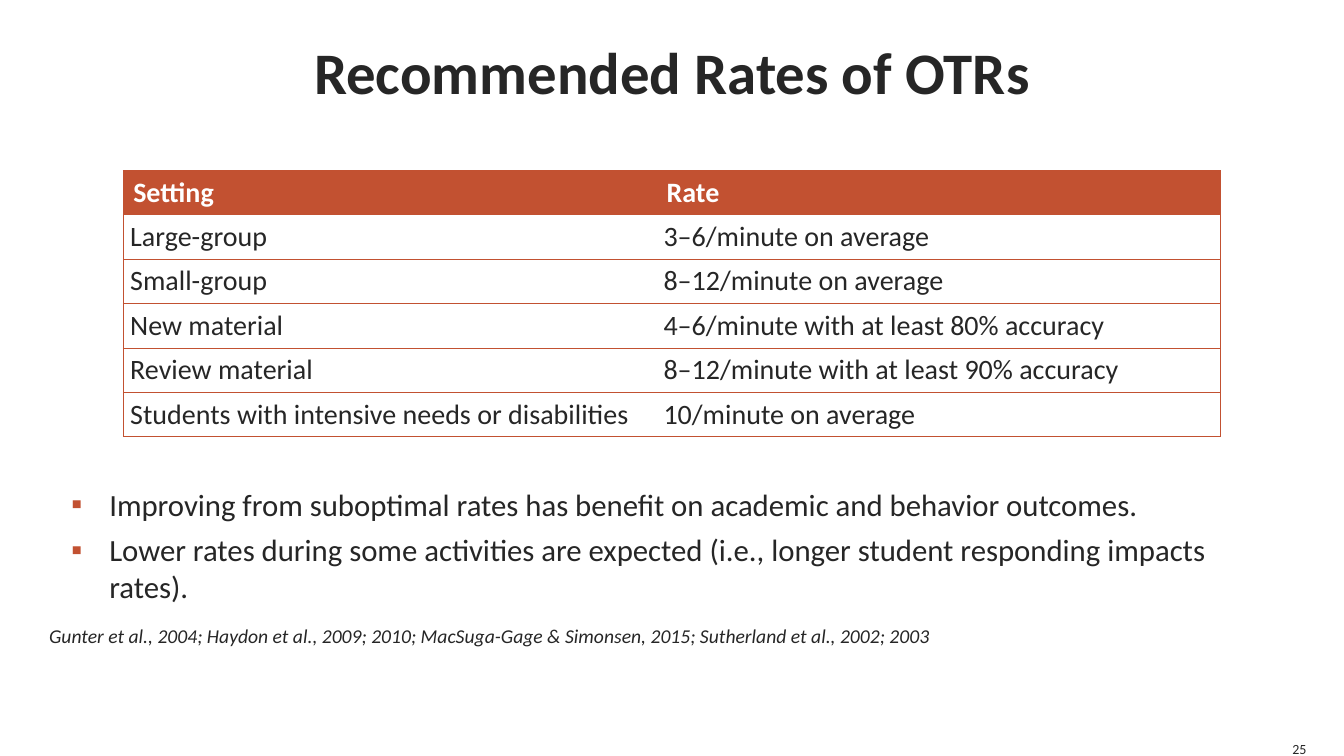
from pptx import Presentation
from pptx.dml.color import RGBColor
from pptx.enum.text import MSO_ANCHOR as ANCHOR, PP_ALIGN as ALIGN
from pptx.oxml.ns import qn
from pptx.util import Pt
from lxml.etree import SubElement

INK, ACCENT, WHITE = "262626", "C25131", "FFFFFF"


def rgb(value):
    return RGBColor.from_string(value)


class Deck:
    """Holds the text style and the current slide, and adds elements to it."""

    style = {"name": "Calibri", "bold": False, "italic": False}

    def __init__(self, prs):
        self.s = prs.slides.add_slide(prs.slide_layouts[5])

    def run(self, p, text, size, color=INK, **extra):
        r = p.add_run()
        r.text = text
        for key, value in {**self.style, "size": Pt(size), **extra}.items():
            setattr(r.font, key, value)
        r.font.color.rgb = rgb(color)

    def inset(self, target, x, y):
        for side, value in zip(("left", "right", "top", "bottom"), (x, x, y, y)):
            setattr(target, "margin_" + side, Pt(value))

    def title(self, text, box):
        sp = self.s.shapes.title
        sp.left, sp.top, sp.width, sp.height = map(Pt, box)
        tf = sp.text_frame
        tf.word_wrap, tf.vertical_anchor = True, ANCHOR.MIDDLE
        self.inset(tf, 0, 0)
        tf.paragraphs[0].alignment = ALIGN.CENTER
        self.run(tf.paragraphs[0], text, 42, bold=True)

    def text(self, lines, box, size, bullet=None, **extra):
        tf = self.s.shapes.add_textbox(*map(Pt, box)).text_frame
        tf.word_wrap = True
        for i, line in enumerate(lines):
            p = tf.add_paragraph() if i else tf.paragraphs[0]
            if bullet:
                self.bullet(p, bullet)
            self.run(p, line, size, **extra)

    def bullet(self, p, char):
        p.space_after = Pt(6)
        pPr = p._p.get_or_add_pPr()
        pPr.set("marL", str(Pt(27)))
        pPr.set("indent", str(-Pt(27)))
        SubElement(SubElement(pPr, qn("a:buClr")), qn("a:srgbClr"), val=ACCENT)
        SubElement(pPr, qn("a:buFont"), typeface="Calibri")
        SubElement(pPr, qn("a:buChar"), char=char)

    def borders(self, cell, shown):
        tcPr = cell._tc.get_or_add_tcPr()
        for side in "LRTB":
            ln = SubElement(tcPr, qn("a:ln" + side), w=str(Pt(0.5)))
            if side in shown:
                fill = SubElement(ln, qn("a:solidFill"))
                SubElement(fill, qn("a:srgbClr"), val=ACCENT)
            else:
                SubElement(ln, qn("a:noFill"))

    def table(self, rows, box, widths):
        table = self.s.shapes.add_table(len(rows), len(widths), *map(Pt, box)).table
        table.horz_banding = False
        for column, width in zip(table.columns, widths):
            column.width = Pt(width)
        for i, row in enumerate(rows):
            table.rows[i].height = Pt(box[3] / len(rows))
            for j, text in enumerate(row):
                cell = table.cell(i, j)
                header = i == 0
                self.inset(cell, 7.2 if header else 5.04, 3.6)
                self.borders(cell, "TB" + ("R" if j else "L"))
                cell.fill.solid()
                cell.fill.fore_color.rgb = rgb(ACCENT if header else WHITE)
                self.run(cell.text_frame.paragraphs[0], text, 20,
                         WHITE if header else INK, bold=header)


def main():
    prs = Presentation()
    prs.slide_width, prs.slide_height = Pt(960), Pt(540)
    deck = Deck(prs)
    deck.title("Recommended Rates of OTRs", (36, 0, 888, 101))
    deck.table([
        ("Setting", "Rate"),
        ("Large-group", "3–6/minute on average"),
        ("Small-group", "8–12/minute on average"),
        ("New material", "4–6/minute with at least 80% accuracy"),
        ("Review material", "8–12/minute with at least 90% accuracy"),
        ("Students with intensive needs or disabilities", "10/minute on average"),
    ], (88, 121.7, 784, 190.2), (381, 403))
    deck.text([
        "Improving from suboptimal rates has benefit on academic and behavior outcomes.",
        "Lower rates during some activities are expected "
        "(i.e., longer student responding impacts rates).",
    ], (44, 343.5, 872, 93.6), 22, bullet="▪")
    deck.text(["25"], (916, 525.6, 32, 15), 10)
    deck.text(["Gunter et al., 2004; Haydon et al., 2009; 2010; MacSuga-Gage & Simonsen, 2015; "
               "Sutherland et al., 2002; 2003"], (28, 442, 861, 24.5), 14, italic=True)
    prs.save("out.pptx")


if __name__ == "__main__":
    main()
